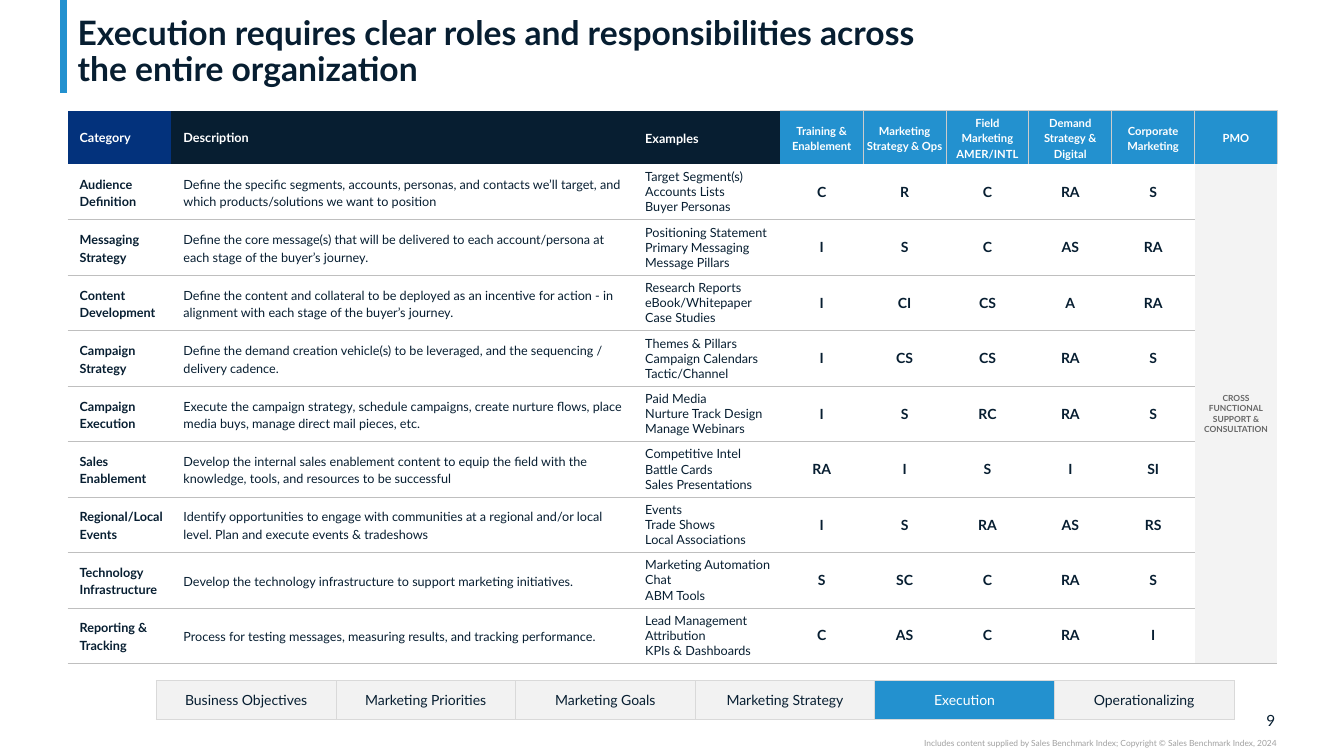
from lxml import etree
from pptx import Presentation
from pptx.dml.color import RGBColor
from pptx.enum import shapes, text
from pptx.oxml import ns
from pptx.util import Inches, Pt

INK = {"navy": "071E31", "royal": "03327C", "blue": "2391CF", "white": "FFFFFF",
       "pale": "F2F2F2", "ash": "F3F3F3", "rule": "BFBFBF", "edge": "CCCCCC",
       "frame": "D9D9D9", "slate": "666666", "mist": "A0A0A0"}
LEFT, MID, RIGHT = text.PP_ALIGN.LEFT, text.PP_ALIGN.CENTER, text.PP_ALIGN.RIGHT
PLAIN = "{2D5ABB26-0587-4C30-8999-92F81FD0307C}"
STEPS = ["Business Objectives", "Marketing Priorities", "Marketing Goals",
         "Marketing Strategy", "Execution", "Operationalizing"]
HEADS = ["Category", "Description", "Examples", "Training & Enablement",
         "Marketing Strategy & Ops", "Field Marketing AMER/INTL",
         "Demand Strategy & Digital", "Corporate Marketing", "PMO"]
TASKS = [
    ("Audience Definition",
     "Define the specific segments, accounts, personas, and contacts we’ll target, and which products/solutions we want to position",
     ["Target Segment(s)", "Accounts Lists", "Buyer Personas"], "C R C RA S"),
    ("Messaging Strategy",
     "Define the core message(s) that will be delivered to each account/persona at each stage of the buyer’s journey.",
     ["Positioning Statement", "Primary Messaging", "Message Pillars"], "I S C AS RA"),
    ("Content Development",
     "Define the content and collateral to be deployed as an incentive for action - in alignment with each stage of the buyer’s journey.",
     ["Research Reports", "eBook/Whitepaper", "Case Studies"], "I CI CS A RA"),
    ("Campaign Strategy",
     "Define the demand creation vehicle(s) to be leveraged, and the sequencing / delivery cadence.",
     ["Themes & Pillars", "Campaign Calendars", "Tactic/Channel"], "I CS CS RA S"),
    ("Campaign Execution",
     "Execute the campaign strategy, schedule campaigns, create nurture flows, place media buys, manage direct mail pieces, etc.",
     ["Paid Media", "Nurture Track Design", "Manage Webinars"], "I S RC RA S"),
    ("Sales Enablement",
     "Develop the internal sales enablement content to equip the field with the knowledge, tools, and resources to be successful",
     ["Competitive Intel", "Battle Cards", "Sales Presentations"], "RA I S I SI"),
    ("Regional/Local Events",
     "Identify opportunities to engage with communities at a regional and/or local level. Plan and execute events & tradeshows",
     ["Events", "Trade Shows", "Local Associations"], "I S RA AS RS"),
    ("Technology Infrastructure",
     "Develop the technology infrastructure to support marketing initiatives.",
     ["Marketing Automation", "Chat", "ABM Tools"], "S SC C RA S"),
    ("Reporting & Tracking",
     "Process for testing messages, measuring results, and tracking performance.",
     ["Lead Management", "Attribution", "KPIs & Dashboards"], "C AS C RA I"),
]


def tint(name):
    """Return the named colour."""
    return RGBColor.from_string(INK[name])


def put(para, words, size, ink, bold=False):
    """Add one styled run to a paragraph."""
    run = para.add_run()
    run.text = words
    run.font.name, run.font.size, run.font.bold = "Lato", Pt(size), bold
    run.font.color.rgb = tint(ink)


def write(frame, lines, size, ink, bold=False, align=LEFT, lead=1.0):
    """Fill a text frame with one paragraph per line."""
    for i, line in enumerate(lines):
        para = frame.add_paragraph() if i else frame.paragraphs[0]
        para.alignment, para.line_spacing = align, lead
        put(para, line, size, ink, bold)


def inset(item, left, top, right, low):
    """Set the margins of a cell or text frame."""
    item.margin_left, item.margin_top = Inches(left), Inches(top)
    item.margin_right, item.margin_bottom = Inches(right), Inches(low)


def trim(cell, sides, ink, width):
    """Draw the listed cell sides and clear the others."""
    props = cell._tc.get_or_add_tcPr()
    for side in "LRTB":
        line = etree.SubElement(props, ns.qn("a:ln" + side), w=str(Pt(width)))
        if side in sides:
            fill = etree.SubElement(line, ns.qn("a:solidFill"))
            etree.SubElement(fill, ns.qn("a:srgbClr"), val=INK[ink])
        else:
            etree.SubElement(line, ns.qn("a:noFill"))


def paint(cell, ink=None):
    """Fill a cell and centre its text vertically."""
    cell.vertical_anchor = text.MSO_ANCHOR.MIDDLE
    if ink:
        cell.fill.solid()
        cell.fill.fore_color.rgb = tint(ink)
    else:
        cell.fill.background()


def grid(slide, x, y, cols, rows):
    """Add a plain table with the given column widths and row heights."""
    table = slide.shapes.add_table(
        len(rows), len(cols), Inches(x), Inches(y),
        Inches(sum(cols)), Inches(sum(rows))).table
    table.first_row = table.horz_banding = False
    table._tbl.tblPr.find(ns.qn("a:tableStyleId")).text = PLAIN
    for col, width in zip(table.columns, cols):
        col.width = Inches(width)
    for row, height in zip(table.rows, rows):
        row.height = Inches(height)
    return table


def head(slide, x, y, w, h):
    """Place the title and the accent bar beside it."""
    title = slide.shapes.title
    title.left, title.top, title.width, title.height = map(Inches, (x, y, w, h))
    frame = title.text_frame
    frame.word_wrap, frame.auto_size = True, text.MSO_AUTO_SIZE.NONE
    frame.vertical_anchor = text.MSO_ANCHOR.BOTTOM
    inset(frame, 0.1, 0, 0.1, 0)
    para = frame.paragraphs[0]
    para.alignment, para.line_spacing = LEFT, 0.9
    put(para, "Execution requires clear roles and responsibilities across ", 24, "navy", True)
    para.add_line_break()
    put(para, "the entire organization", 24, "navy", True)
    edge = Inches(x - 0.04)
    bar = slide.shapes.add_connector(
        shapes.MSO_CONNECTOR.STRAIGHT, edge, 0, edge, Inches(y + h + 0.04))
    bar.line.color.rgb, bar.line.width = tint("blue"), Pt(5)
    etree.SubElement(bar._element.spPr, ns.qn("a:effectLst"))


def matrix(slide, x, y, w, h):
    """Place the table of tasks and the role each team plays."""
    lead, top = [1.03, 4.58, 1.46], 0.53
    cols = lead + [(w - sum(lead)) / 6] * 6
    rows = [top] + [(h - top) / len(TASKS)] * len(TASKS)
    table = grid(slide, x, y, cols, rows)
    last = len(cols) - 1
    for r in range(len(rows)):
        for c in range(len(cols)):
            cell = table.cell(r, c)
            inset(cell, 0.12 if c < 3 else 0.03, 0.02, 0.03, 0.02)
            if r:
                trim(cell, "B" if r == 1 else "TB", "rule", 0.5)
                paint(cell, "ash" if c == last else None)
            else:
                trim(cell, "" if c < 3 else "TR" if c == 3 else "LTR", "edge", 0.75)
                paint(cell, ["royal", "navy", "navy"][c] if c < 3 else "blue")
    for c, name in enumerate(HEADS):
        write(table.cell(0, c).text_frame, [name], 9 if c < 3 else 8, "white", True,
              LEFT if c < 3 else MID, 1.0 if c < 2 else 1.15)
    for r, (name, about, cases, roles) in enumerate(TASKS, 1):
        write(table.cell(r, 0).text_frame, [name], 9, "navy", True, lead=1.15)
        write(table.cell(r, 1).text_frame, [about], 9, "navy", lead=1.15)
        write(table.cell(r, 2).text_frame, cases, 9, "navy")
        for c, role in enumerate(roles.split(), 3):
            write(table.cell(r, c).text_frame, [role], 10, "navy", True, MID)
    span = table.cell(1, last)
    span.merge(table.cell(len(TASKS), last))
    write(span.text_frame, ["CROSS FUNCTIONAL", "SUPPORT & CONSULTATION"],
          6, "slate", True, MID)


def track(slide, x, y, w, h):
    """Place the strip of steps with the current one lit."""
    table = grid(slide, x, y, [w / len(STEPS)] * len(STEPS), [h])
    for c, step in enumerate(STEPS):
        cell, live = table.cell(0, c), step == "Execution"
        inset(cell, 0, 0.05, 0, 0.05)
        trim(cell, "LRTB", "frame", 0.5)
        paint(cell, "blue" if live else "pale")
        write(cell.text_frame, [step], 10, "white" if live else "navy", align=MID)


def note(slide, x, y, w, h, words, size, ink):
    """Place a right-aligned line of small print."""
    frame = slide.shapes.add_textbox(*map(Inches, (x, y, w, h))).text_frame
    frame.word_wrap = True
    inset(frame, 0, 0, 0, 0)
    write(frame, [words], size, ink, align=RIGHT)


def main():
    """Build and save the slide."""
    deck = Presentation()
    deck.slide_width, deck.slide_height = Inches(13.33), Inches(7.5)
    slide = deck.slides.add_slide(deck.slide_layouts[5])
    head(slide, 0.67, 0.04, 11.99, 0.84)
    matrix(slide, 0.67, 1.1, 12, 5.48)
    track(slide, 1.55, 6.75, 10.69, 0.39)
    note(slide, 12.32, 7.05, 0.33, 0.19, "9", 11, "navy")
    note(slide, 7.5, 7.32, 5.16, 0.1,
         "Includes content supplied by Sales Benchmark Index; Copyright © Sales Benchmark Index, 2024",
         6, "mist")
    deck.save("out.pptx")


if __name__ == "__main__":
    main()
